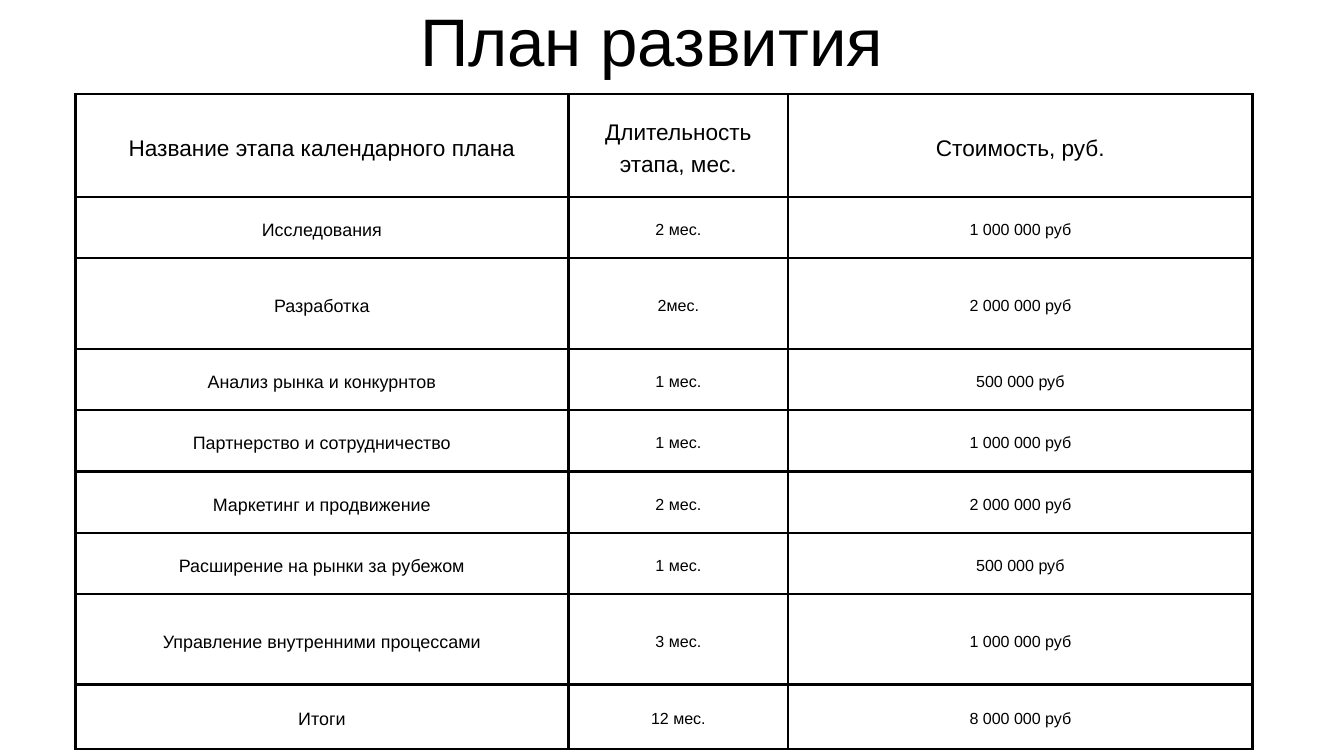
from lxml.etree import SubElement
from pptx import Presentation
from pptx.dml.color import RGBColor
from pptx.enum.text import MSO_ANCHOR, MSO_AUTO_SIZE, PP_ALIGN
from pptx.oxml.ns import qn
from pptx.util import Inches, Pt

BLACK = "000000"
COLUMN_WIDTHS = [7.34, 3.27, 6.91]
ROW_HEIGHTS = [1.53, 0.91, 1.35, 0.91, 0.92, 0.91, 0.91, 1.35, 0.96]
PLAN = [
    ("Название этапа календарного плана", "Длительность этапа, мес.", "Стоимость, руб."),
    ("Исследования", "2 мес.", "1 000 000 руб"),
    ("Разработка", "2мес.", "2 000 000 руб"),
    ("Анализ рынка и конкурнтов", "1 мес.", "500 000 руб"),
    ("Партнерство и сотрудничество", "1 мес.", "1 000 000 руб"),
    ("Маркетинг и продвижение", "2 мес.", "2 000 000 руб"),
    ("Расширение на рынки за рубежом", "1 мес.", "500 000 руб"),
    ("Управление внутренними процессами", "3 мес.", "1 000 000 руб"),
    ("Итоги", "12 мес.", "8 000 000 руб"),
]


def format_paragraph(paragraph, size, spacing, alignment, color=BLACK):
    paragraph.alignment = alignment
    paragraph.line_spacing = Pt(spacing)
    for run in paragraph.runs:
        run.font.name = "Arial"
        run.font.size = Pt(size)
        run.font.color.rgb = RGBColor.from_string(color)


def add_borders(cell, color, width):
    properties = cell._tc.get_or_add_tcPr()
    for side in ("a:lnL", "a:lnR", "a:lnT", "a:lnB"):
        line = SubElement(properties, qn(side), w=str(Pt(width)))
        fill = SubElement(line, qn("a:solidFill"))
        SubElement(fill, qn("a:srgbClr"), val=color)


presentation = Presentation()
presentation.slide_width = Inches(20)
presentation.slide_height = Inches(11.25)
slide = presentation.slides.add_slide(presentation.slide_layouts[5])

title = slide.shapes.title
title.left, title.top = Inches(6.25), Inches(-0.01)
title.width, title.height = Inches(7.49), Inches(1.21)
title_frame = title.text_frame
title_frame.text = "План развития"
title_frame.word_wrap = True
title_frame.auto_size = MSO_AUTO_SIZE.SHAPE_TO_FIT_TEXT
title_frame.vertical_anchor = MSO_ANCHOR.TOP
title_frame.margin_left = title_frame.margin_right = 0
title_frame.margin_top = title_frame.margin_bottom = 0
format_paragraph(title_frame.paragraphs[0], 72, 86.4, PP_ALIGN.LEFT)

table = slide.shapes.add_table(
    len(PLAN), len(COLUMN_WIDTHS), Inches(1.12), Inches(1.4),
    Inches(sum(COLUMN_WIDTHS)), Inches(sum(ROW_HEIGHTS)),
).table
table.first_row = False
table.horz_banding = False
for column, width in zip(table.columns, COLUMN_WIDTHS):
    column.width = Inches(width)
for row, height in zip(table.rows, ROW_HEIGHTS):
    row.height = Inches(height)

for row_index, stage in enumerate(PLAN):
    for column_index, text in enumerate(stage):
        if row_index == 0:
            size, spacing = 24.2, 33.9
        elif column_index == 0:
            size, spacing = 19.2, 26.9
        else:
            size, spacing = 17.2, 24.1
        cell = table.cell(row_index, column_index)
        cell.text_frame.text = text
        cell.vertical_anchor = MSO_ANCHOR.MIDDLE
        cell.margin_left = cell.margin_right = Inches(0.21)
        cell.margin_top = cell.margin_bottom = Inches(0.21)
        add_borders(cell, BLACK, 3)
        cell.fill.background()
        format_paragraph(cell.text_frame.paragraphs[0], size, spacing, PP_ALIGN.CENTER)

presentation.save("out.pptx")
